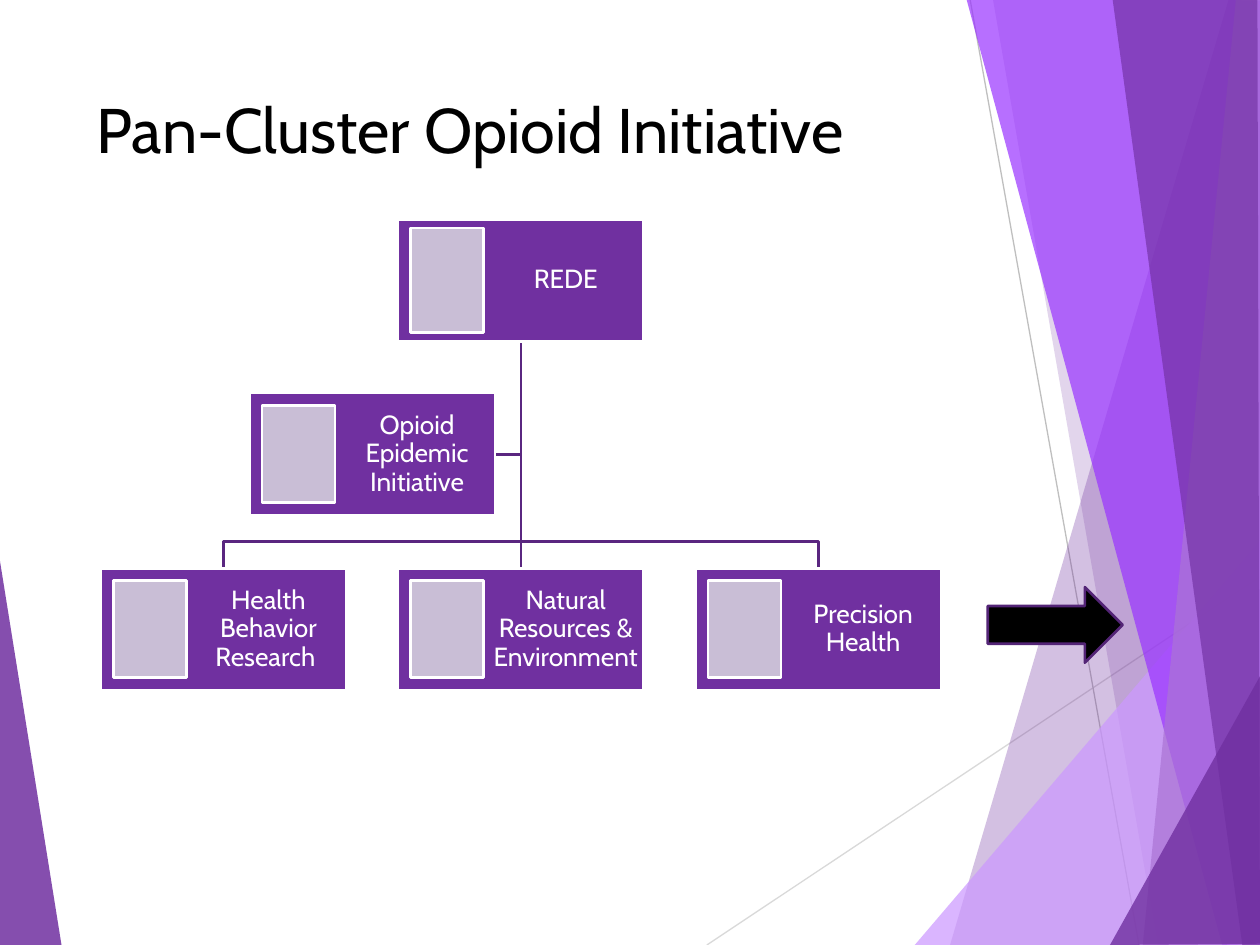
from lxml.etree import SubElement
from pptx import Presentation
from pptx.dml.color import RGBColor
from pptx.enum.shapes import MSO_CONNECTOR, MSO_SHAPE
from pptx.enum.text import MSO_ANCHOR, PP_ALIGN
from pptx.oxml.ns import qn
from pptx.util import Inches, Pt

FONT = "Cabin"
PURPLE = "7030A0"
BRANCH = "5A2680"
CARD_WIDTH, CARD_HEIGHT = 1.95, 0.97
COLUMN_LEFT, COLUMN_STEP = 0.8, 2.36
TOP_ROW, MIDDLE_ROW, BOTTOM_ROW = 1.74, 3.12, 4.51
JUNCTION = 4.3

FACETS_BEHIND = [
    ([(-0.01, 4.39), (0.49, 7.51), (-0.01, 7.5)], PURPLE, 85),
]
RAYS = [
    ((5.61, 7.5), (10.01, 4.57), "D9D9D9"),
    ((7.7, 0), (9.04, 7.5), "BFBFBF"),
]
FACETS = [
    ([(9.75, 0), (7.54, 7.5), (10.02, 7.51), (10.01, 0.01)], PURPLE, 30),
    ([(7.88, -0.01), (9.19, 7.5), (10.01, 7.5), (10.01, -0.01)], PURPLE, 20),
    ([(7.26, 7.5), (10, 4.29), (10.01, 7.5)], "CC99FF", 72),
    ([(7.67, -0.01), (9.7, 7.5), (10.01, 7.49), (10.01, -0.01)], "9933FF", 70),
    ([(9.81, -0.01), (9.07, 7.5), (10.01, 7.5), (10, -0.01)], "AB74D5", 70),
    ([(8.83, -0.01), (9.86, 7.5), (10, 7.5), (9.98, -0.01)], PURPLE, 65),
    ([(8.81, 7.5), (10.01, 5.35), (10.01, 7.49)], PURPLE, 80),
]


def color(code):
    return RGBColor.from_string(code)


def style_shape(shape, fill=None, line=None, opacity=100):
    shape.shadow.inherit = False
    if fill:
        shape.fill.solid()
        shape.fill.fore_color.rgb = color(fill)
        if opacity < 100:
            solid = shape.fill._xPr.find(qn("a:solidFill"))
            SubElement(solid[0], qn("a:alpha"), val=str(opacity * 1000))
    else:
        shape.fill.background()
    if line:
        shape.line.color.rgb = color(line)
        shape.line.width = Pt(1.5)
    else:
        shape.line.fill.background()


def add_outline(page, points, closed=True, **style):
    corners = [(Inches(x), Inches(y)) for x, y in points]
    builder = page.shapes.build_freeform(*corners[0])
    builder.add_line_segments(corners[1:], close=closed)
    style_shape(builder.convert_to_shape(), **style)


def add_ray(page, start, end, line):
    ends = [Inches(value) for value in (*start, *end)]
    ray = page.shapes.add_connector(MSO_CONNECTOR.STRAIGHT, *ends)
    ray.line.color.rgb = color(line)
    ray.line.width = Pt(0.75)
    SubElement(ray._element.spPr, qn("a:effectLst"))


def add_shape(page, kind, left, top, width, height, **style):
    area = [Inches(value) for value in (left, top, width, height)]
    shape = page.shapes.add_shape(kind, *area)
    style_shape(shape, **style)
    return shape


def write_text(box, text, size, font_color, align, anchor, insets, spacing=1.0):
    frame = box.text_frame
    frame.word_wrap = True
    frame.vertical_anchor = anchor
    left, top, right, bottom = [Inches(value) for value in insets]
    frame.margin_left, frame.margin_right = left, right
    frame.margin_top, frame.margin_bottom = top, bottom
    para = frame.paragraphs[0]
    para.alignment = align
    para.line_spacing = spacing
    span = para.add_run()
    span.text = text
    span.font.name = FONT
    span.font.size = Pt(size)
    span.font.color.rgb = color(font_color)


def add_title(page, text):
    box = page.shapes.add_textbox(Inches(0.67), Inches(0.67), Inches(6.94), Inches(1.44))
    write_text(box, text, size=36, font_color="000000", align=PP_ALIGN.LEFT,
               anchor=MSO_ANCHOR.TOP, insets=(0.1, 0.05, 0.1, 0.05))


def add_card(page, text, left, top, photo_inset=0.1):
    card = add_shape(page, MSO_SHAPE.RECTANGLE, left, top, CARD_WIDTH, CARD_HEIGHT,
                     fill=PURPLE, line="FFFFFF")
    write_text(card, text, size=15, font_color="FFFFFF", align=PP_ALIGN.CENTER,
               anchor=MSO_ANCHOR.MIDDLE, insets=(0.72, 0.01, 0.01, 0.01), spacing=0.9)
    add_shape(page, MSO_SHAPE.RECTANGLE, left + 0.1, top + photo_inset,
              0.58, CARD_HEIGHT - 2 * photo_inset, fill="C9BED6", line="FFFFFF")


def add_backdrop(page):
    for points, fill, opacity in FACETS_BEHIND:
        add_outline(page, points, fill=fill, opacity=opacity)
    for start, end, line in RAYS:
        add_ray(page, start, end, line)
    for points, fill, opacity in FACETS:
        add_outline(page, points, fill=fill, opacity=opacity)


def add_organization(page):
    columns = [COLUMN_LEFT + COLUMN_STEP * index for index in range(3)]
    centers = [left + CARD_WIDTH / 2 for left in columns]
    trunk = centers[1]
    trunk_top = TOP_ROW + CARD_HEIGHT
    assistant_left = (columns[0] + columns[1]) / 2
    assistant_side = (assistant_left + CARD_WIDTH, MIDDLE_ROW + CARD_HEIGHT / 2)

    routes = [[(trunk, trunk_top), (trunk, assistant_side[1]), assistant_side]]
    for center in centers:
        bend = [] if center == trunk else [(trunk, JUNCTION), (center, JUNCTION)]
        routes.append([(trunk, trunk_top), *bend, (center, BOTTOM_ROW)])
    for route in routes:
        add_outline(page, route, closed=False, line=BRANCH)

    add_card(page, "REDE", columns[1], TOP_ROW, photo_inset=0.07)
    clusters = ["Health Behavior Research ", "Natural Resources & Environment",
                "Precision Health"]
    for text, left in zip(clusters, columns):
        add_card(page, text, left, BOTTOM_ROW)
    add_card(page, "Opioid Epidemic Initiative", assistant_left, MIDDLE_ROW)


def main():
    deck = Presentation()
    deck.slide_width, deck.slide_height = Inches(10), Inches(7.5)
    page = deck.slides.add_slide(deck.slide_layouts[6])
    add_backdrop(page)
    add_organization(page)
    add_shape(page, MSO_SHAPE.RIGHT_ARROW, 7.84, 4.66, 1.07, 0.6,
              fill="000000", line="532476")
    add_title(page, "Pan-Cluster Opioid Initiative")
    deck.save("out.pptx")


if __name__ == "__main__":
    main()
